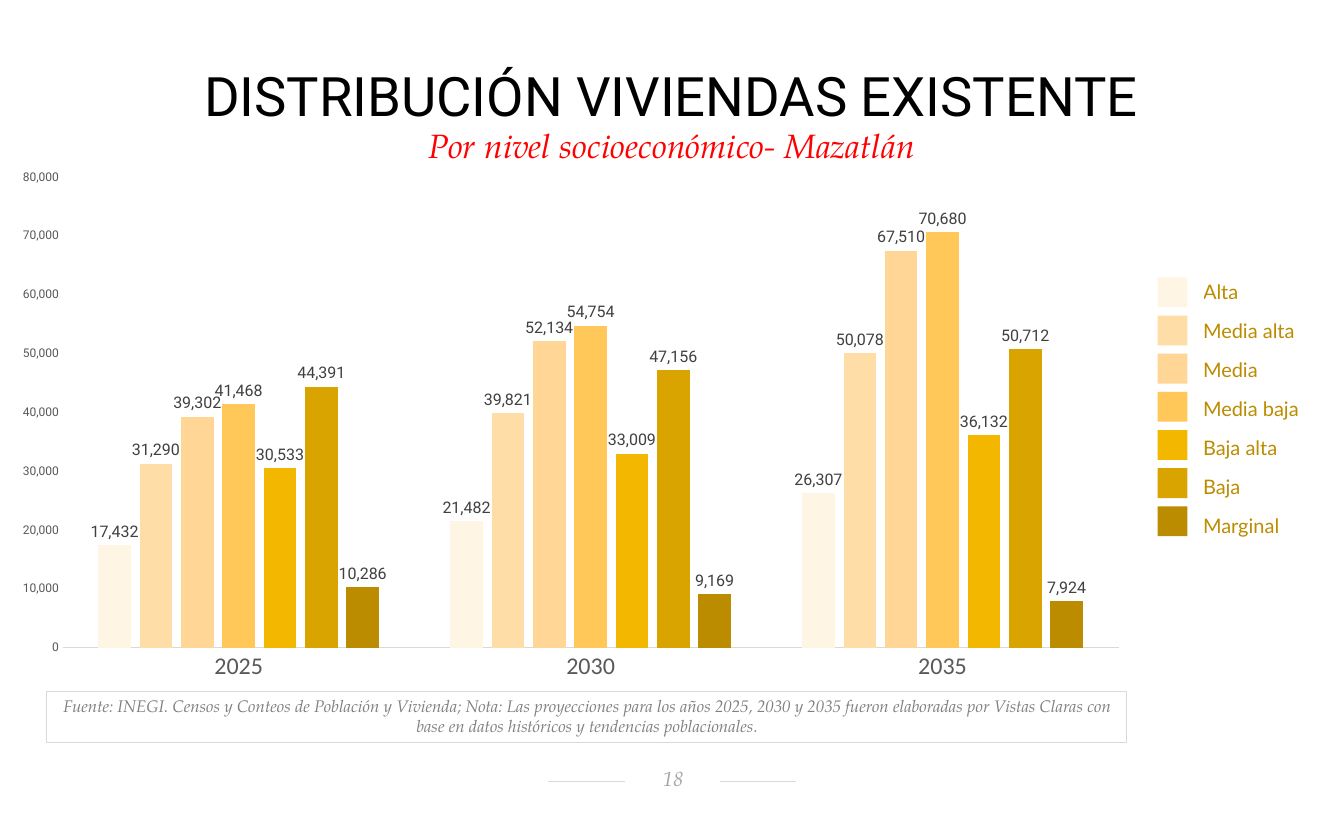
from lxml import etree
from pptx import Presentation
from pptx import util as u
from pptx.chart import data as chart_data
from pptx.dml.color import RGBColor
from pptx.enum import chart as ch, shapes, text
from pptx.oxml import ns

BLACK = RGBColor(0x00, 0x00, 0x00)
WHITE = RGBColor(0xFF, 0xFF, 0xFF)
RED = RGBColor(0xFF, 0x00, 0x00)
RULE = RGBColor(0xD9, 0xD9, 0xD9)
PAGE_GREY = RGBColor(0xA6, 0xA6, 0xA6)
NOTE_GREY = RGBColor(0x80, 0x80, 0x80)
AXIS_GREY = RGBColor(0x59, 0x59, 0x59)
LABEL_GREY = RGBColor(0x40, 0x40, 0x40)
DARK_GOLD = RGBColor(0xBC, 0x8C, 0x00)

SERIF, SANS = "TeX Gyre Pagella", "Roboto"
YEARS = ["2025", "2030", "2035"]
LEVELS = [
    ("Alta", RGBColor(0xFF, 0xF5, 0xE5), (17432, 21482, 26307)),
    ("Media alta", RGBColor(0xFF, 0xDD, 0xA7), (31290, 39821, 50078)),
    ("Media", RGBColor(0xFF, 0xD6, 0x95), (39302, 52134, 67510)),
    ("Media baja", RGBColor(0xFF, 0xC8, 0x59), (41468, 54754, 70680)),
    ("Baja alta", RGBColor(0xF3, 0xB7, 0x00), (30533, 33009, 36132)),
    ("Baja", RGBColor(0xDA, 0xA4, 0x00), (44391, 47156, 50712)),
    ("Marginal", DARK_GOLD, (10286, 9169, 7924)),
]
SOURCE_NOTE = (
    "Fuente: INEGI. Censos y Conteos de Población y Vivienda; Nota: Las proyecciones "
    "para los años 2025, 2030 y 2035 fueron elaboradas por Vistas Claras con base en "
    "datos históricos y tendencias poblacionales."
)


def cm(*lengths):
    return [u.Cm(n) for n in lengths]


def apply(target, values):
    for name, value in values.items():
        setattr(target, name, value)


class SlideBuilder:
    """Holds the line style and the current slide."""

    rule_color, rule_width = RULE, u.Pt(0.75)
    number_format = "#,##0"

    def __init__(self, prs):
        self.s = prs.slides.add_slide(prs.slide_layouts[6])

    def style_font(self, font, name, size, color, italic=False):
        apply(font, {"name": name, "size": u.Pt(size), "italic": italic, "bold": False})
        font.color.rgb = color

    def style_line(self, line):
        line.color.rgb, line.width = self.rule_color, self.rule_width

    def put_text(self, tf, words, font, frame=None, para=None):
        apply(tf, {"word_wrap": True, **(frame or {})})
        p = tf.paragraphs[0]
        apply(p, {"alignment": text.PP_ALIGN.CENTER, **(para or {})})
        r = p.add_run()
        r.text = words
        self.style_font(r.font, *font)

    def textbox(self, box, words, font, frame=None, para=None):
        sp = self.s.shapes.add_textbox(*cm(*box))
        self.put_text(sp.text_frame, words, font, frame, para)

    def rect(self, box, fill=None, outlined=False):
        sp = self.s.shapes.add_shape(shapes.MSO_SHAPE.RECTANGLE, *cm(*box))
        sp.shadow.inherit = False
        if fill is None:
            sp.fill.background()
        else:
            sp.fill.solid()
            sp.fill.fore_color.rgb = fill
        if outlined:
            self.style_line(sp.line)
        else:
            sp.line.fill.background()
        return sp

    def rule(self, x1, x2, y):
        line = self.s.shapes.add_connector(
            shapes.MSO_CONNECTOR.STRAIGHT, *cm(x1, y, x2, y))
        self.style_line(line.line)
        etree.SubElement(line._element.spPr, ns.qn("a:effectLst"))

    def name_table(self, left, top, width, row_height, names, font):
        frame = self.s.shapes.add_table(
            len(names), 1, *cm(left, top, width, row_height * len(names)))
        table = frame.table
        apply(table, {"first_row": False, "horz_banding": False})
        for row, name in enumerate(names):
            cell = table.cell(row, 0)
            cell.fill.background()
            apply(cell, {"margin_left": 0, "margin_right": 0, "margin_top": 0,
                         "margin_bottom": 0,
                         "vertical_anchor": text.MSO_ANCHOR.MIDDLE})
            self.put_text(cell.text_frame, name, font,
                          para={"alignment": text.PP_ALIGN.LEFT})

    def column_chart(self, box, categories, levels):
        data = chart_data.CategoryChartData(number_format=self.number_format)
        data.categories = categories
        for name, _, values in levels:
            data.add_series(name, values)
        chart = self.s.shapes.add_chart(
            ch.XL_CHART_TYPE.COLUMN_CLUSTERED, *cm(*box), data).chart
        apply(chart, {"has_legend": False, "has_title": False})
        self.style_font(chart.font, SANS, 9, BLACK)

        plot = chart.plots[0]
        apply(plot, {"gap_width": 219, "overlap": -27, "vary_by_categories": False})
        for series, (_, color, _) in zip(plot.series, levels):
            series.format.fill.solid()
            series.format.fill.fore_color.rgb = color
            labels = series.data_labels
            apply(labels, {"show_value": True, "number_format": self.number_format,
                           "number_format_is_linked": False,
                           "position": ch.XL_LABEL_POSITION.OUTSIDE_END})
            self.style_font(labels.font, SANS, 12, LABEL_GREY)

        ticks = {"major_tick_mark": ch.XL_TICK_MARK.NONE,
                 "minor_tick_mark": ch.XL_TICK_MARK.NONE,
                 "has_major_gridlines": False}
        years, homes = chart.category_axis, chart.value_axis
        apply(years, ticks)
        apply(homes, {**ticks, "minimum_scale": 0, "maximum_scale": 80000,
                      "major_unit": 10000})
        self.style_line(years.format.line)
        homes.format.line.fill.background()
        apply(homes.tick_labels, {"number_format": self.number_format,
                                  "number_format_is_linked": False})
        self.style_font(years.tick_labels.font, "Calibri", 18, AXIS_GREY)
        self.style_font(homes.tick_labels.font, SANS, 9, AXIS_GREY)


def main():
    prs = Presentation()
    prs.slide_width, prs.slide_height = cm(35.56, 21.59)
    b = SlideBuilder(prs)
    grow = {"auto_size": text.MSO_AUTO_SIZE.SHAPE_TO_FIT_TEXT}

    # Page number on its rule
    b.rule(14.5, 21.06, 20.68)
    page = b.rect((16.54, 20.27, 2.51, 0.74), WHITE)
    b.put_text(page.text_frame, "18", (SERIF, 15.4, PAGE_GREY, True),
               {"vertical_anchor": text.MSO_ANCHOR.MIDDLE, "margin_left": u.Cm(0.28),
                "margin_top": u.Cm(0.05)})

    # Source note
    note = b.rect((1.24, 18.29, 28.58, 1.35), outlined=True)
    b.put_text(note.text_frame, SOURCE_NOTE, (SERIF, 12.6, NOTE_GREY, True),
               {**grow, "vertical_anchor": text.MSO_ANCHOR.TOP})

    # Subtitle
    b.textbox((-0.89, 3.18, 37.34, 1.35), "Por nivel socioeconómico- Mazatlán",
              (SERIF, 25.2, RED, True), grow, {"space_after": u.Pt(4.2)})

    # Legend: names and swatches
    b.name_table(31.83, 7.21, 3.56, 1.03, [name for name, _, _ in LEVELS],
                 ("Lato", 15, DARK_GOLD))
    for i, (_, color, _) in enumerate(LEVELS):
        b.rect((30.63, 7.34 + 1.01 * i, 0.79, 0.79), color)

    # Chart
    b.column_chart((0, 4.22, 30.2, 14.07), YEARS, LEVELS)

    # Title
    b.textbox((1.24, 1.96, 33.05, 1.52), "DISTRIBUCIÓN VIVIENDAS EXISTENTE",
              (SANS, 40.8, BLACK),
              {**grow, "margin_left": u.Cm(0.3), "margin_right": u.Cm(0.3),
               "margin_top": u.Cm(0.15), "margin_bottom": u.Cm(0.15)},
              {"line_spacing": 0.7})

    prs.save("out.pptx")


if __name__ == "__main__":
    main()
